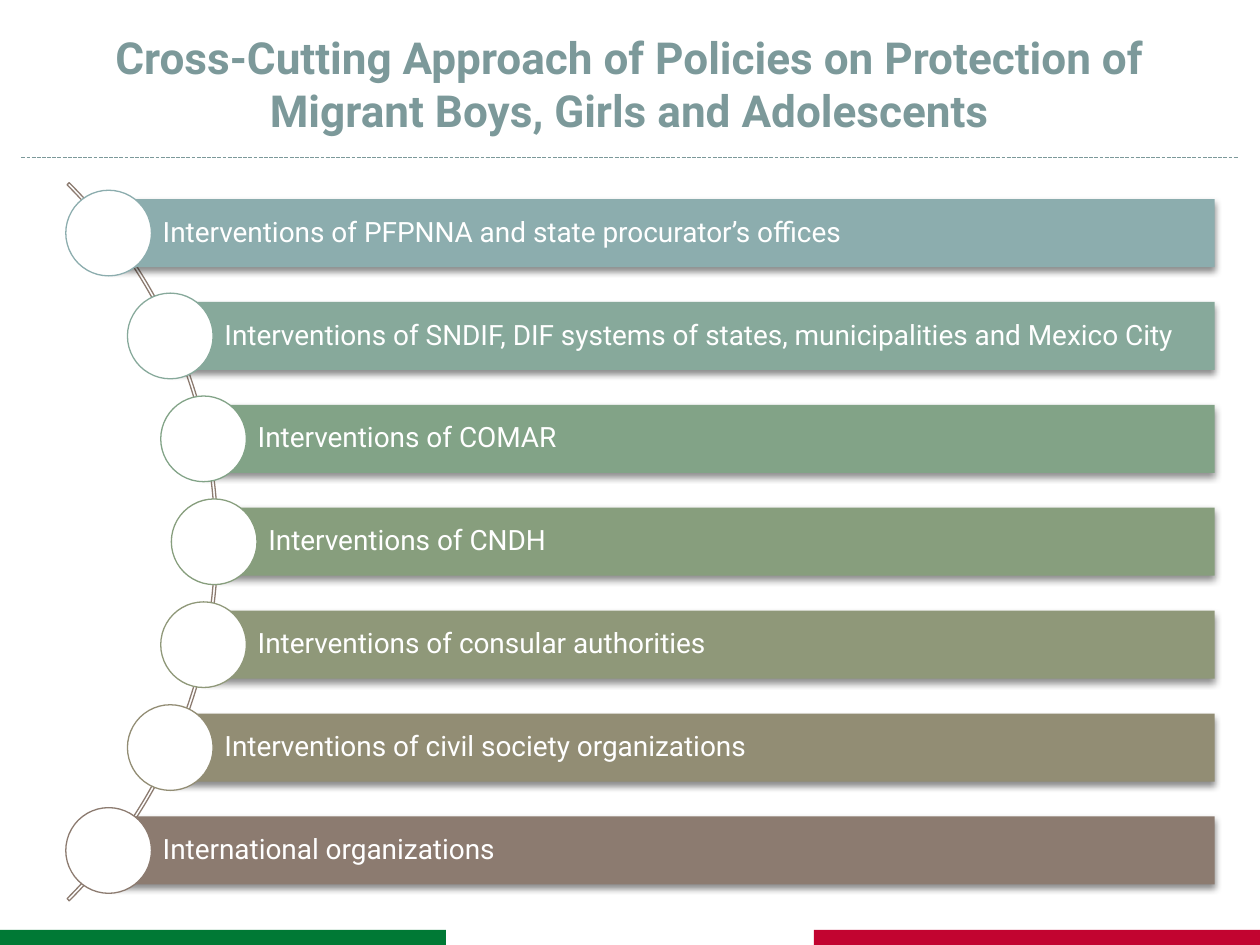
from math import sqrt

from lxml import etree
from pptx import Presentation
from pptx.dml.color import RGBColor
from pptx.enum.dml import MSO_LINE
from pptx.enum.shapes import MSO_CONNECTOR, MSO_SHAPE
from pptx.enum.text import MSO_ANCHOR, MSO_AUTO_SIZE, PP_ALIGN
from pptx.oxml import parse_xml
from pptx.oxml.ns import nsdecls, qn
from pptx.util import Inches, Pt

RECTANGLE, OVAL, ARC = MSO_SHAPE.RECTANGLE, MSO_SHAPE.OVAL, MSO_SHAPE.BLOCK_ARC
MIDDLE, LEFT, CENTER = MSO_ANCHOR.MIDDLE, PP_ALIGN.LEFT, PP_ALIGN.CENTER
DASH = MSO_LINE.SQUARE_DOT
NO_AUTOFIT = MSO_AUTO_SIZE.NONE

FONT = "Roboto"
WHITE = RGBColor(0xFF, 0xFF, 0xFF)
TEAL = RGBColor(0x7C, 0x99, 0x9A)
GREEN = RGBColor(0x00, 0x79, 0x35)
RED = RGBColor(0xC2, 0x04, 0x30)
BROWN = RGBColor(0x8C, 0x7B, 0x70)

INTERVENTIONS = [
    ("Interventions of PFPNNA and state procurator’s offices", RGBColor(0x8C, 0xAD, 0xAE)),
    ("Interventions of SNDIF, DIF systems of states, municipalities and Mexico City",
     RGBColor(0x87, 0xA9, 0x9B)),
    ("Interventions of COMAR", RGBColor(0x82, 0xA3, 0x87)),
    ("Interventions of CNDH", RGBColor(0x87, 0x9E, 0x7D)),
    ("Interventions of consular authorities", RGBColor(0x8F, 0x98, 0x79)),
    ("Interventions of civil society organizations", RGBColor(0x92, 0x8D, 0x74)),
    ("International organizations", BROWN),
]

SHADOW = (
    f'<a:outerShdw {nsdecls("a")} blurRad="{Pt(4)}" dist="{Pt(2)}" dir="5400000" rotWithShape="0">'
    '<a:srgbClr val="000000"><a:alpha val="45000"/></a:srgbClr></a:outerShdw>'
)


def add_shape(kind, left, top, width, height, fill=None, line=None):
    shape = page.shapes.add_shape(kind, Inches(left), Inches(top), Inches(width), Inches(height))
    shape.shadow.inherit = False
    if fill is None:
        shape.fill.background()
    else:
        shape.fill.solid()
        shape.fill.fore_color.rgb = fill
    if line is None:
        shape.line.fill.background()
    else:
        shape.line.color.rgb = line
        shape.line.width = Pt(0.75)
    return shape


def write(frame, text, size, color, align):
    frame.text = text
    frame.word_wrap = True
    frame.auto_size = NO_AUTOFIT
    frame.vertical_anchor = MIDDLE
    para = frame.paragraphs[0]
    para.alignment = align
    font = para.runs[0].font
    font.name, font.size, font.color.rgb = FONT, Pt(size), color
    return para


deck = Presentation()
deck.slide_width, deck.slide_height = Inches(10), Inches(7.5)
page = deck.slides.add_slide(deck.slide_layouts[5])

for left, color in ((0, GREEN), (6.46, RED)):
    add_shape(RECTANGLE, left, 7.38, 3.54, 0.12, color)

divider = page.shapes.add_connector(
    MSO_CONNECTOR.STRAIGHT, Inches(0.17), Inches(1.25), Inches(9.83), Inches(1.25))
divider.line.color.rgb = TEAL
divider.line.width = Pt(0.75)
divider.line.dash_style = DASH
etree.SubElement(divider.line._get_or_add_ln().getparent(), qn("a:effectLst"))

title = page.shapes.title
title.left, title.top = Inches(0.33), Inches(0.25)
title.width, title.height = Inches(9.33), Inches(0.83)
heading = write(
    title.text_frame,
    "Cross-Cutting Approach of Policies on Protection of Migrant Boys, Girls and Adolescents",
    25.2, TEAL, CENTER)
heading.runs[0].font.bold = True

arc = add_shape(ARC, -6.33, 0.27, 8.06, 8.06, line=BROWN)
arc.adjustments[0] = 189
arc.adjustments[1] = 27
arc.adjustments[2] = 0.003

ARC_X, ARC_Y, RADIUS = -2.3, 4.3, 4
PITCH = 2.45 / 3
BAR_RIGHT, BAR_HEIGHT, DOT = 9.64, 0.54, 0.68

for index, (label, color) in enumerate(INTERVENTIONS):
    offset = (index - 3) * PITCH
    x = ARC_X + sqrt(RADIUS ** 2 - offset ** 2)
    y = ARC_Y + offset
    bar = add_shape(RECTANGLE, x, y - BAR_HEIGHT / 2, BAR_RIGHT - x, BAR_HEIGHT, color)
    bar.element.spPr.find(qn("a:effectLst")).append(parse_xml(SHADOW))
    frame = bar.text_frame
    frame.margin_left = Inches(0.43)
    frame.margin_top = frame.margin_right = frame.margin_bottom = Inches(0.04)
    write(frame, label, 16, WHITE, LEFT).line_spacing = 0.9
    add_shape(OVAL, x - DOT / 2, y - DOT / 2, DOT, DOT, WHITE, color)

deck.save("out.pptx")
